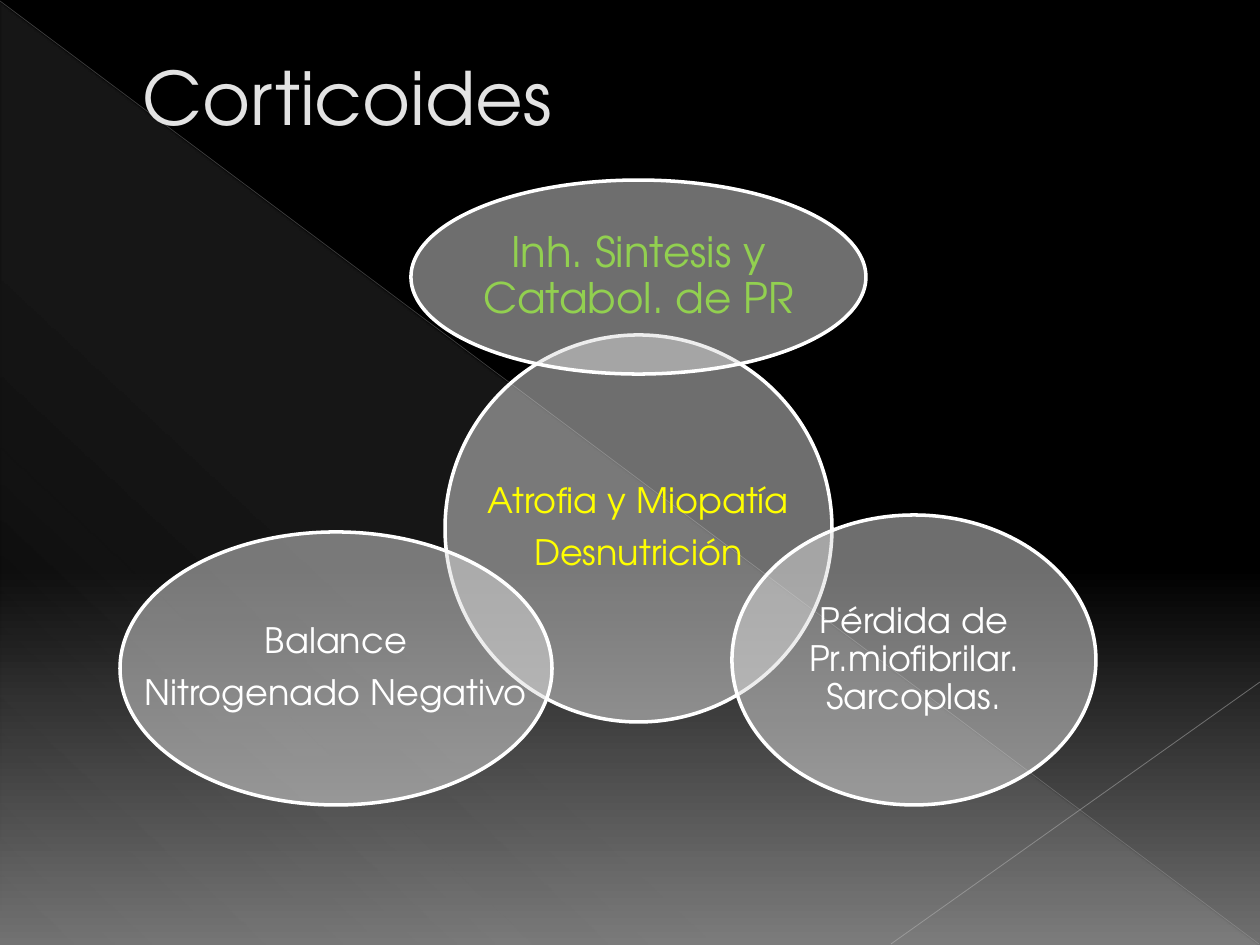
"""Build the Corticoides slide: four overlapping ellipses on a dark gradient."""
import pptx
import pptx.util
import pptx.dml.color
import pptx.enum.shapes
import pptx.enum.text
import pptx.oxml
import pptx.oxml.ns

FONT = "TeX Gyre Adventor"
COLORS = {
    "black": "000000", "gray": "707070", "veil": "F8F8F8",
    "edge": "B4B4B4", "ray": "BDBDBD", "title": "E3E3E3",
    "disc": "DDDDDD", "white": "FFFFFF", "yellow": "FFFF00", "green": "92D050",
}
BACK = [(0, "black", 100), (60, "black", 100), (100, "gray", 100)]
VEIL = [(0, "veil", 10), (70, "veil", 8), (100, "veil", 1)]
RAYS = [
    ((0, 1, 1259, 944), "edge", 0.39, 35),
    ((1260, 682, 891, 944), "ray", 0.47, 45),
]
TITLE = "Corticoides"
DISCS = [
    ((445, 335, 387, 387), ["Atrofia y Miopatía", "Desnutrición"], 20, "yellow", False),
    ((411, 180, 455, 194), ["Inh. Sintesis y Catabol. de PR"], 24, "green", True),
    ((732, 515, 364, 290), ["Pérdida de Pr.miofibrilar. Sarcoplas."], 20, "white", True),
    ((120, 532, 432, 273), ["Balance", "Nitrogenado Negativo"], 20, "white", False),
]
SHAPE = pptx.enum.shapes.MSO_SHAPE
ALIGN = pptx.enum.text.PP_ALIGN
Pt = pptx.util.Pt
NS = pptx.oxml.ns.nsdecls("a")
qn = pptx.oxml.ns.qn


def px(*vals):
    return [pptx.util.Emu(round(v * 914400 / 126)) for v in vals]


def rgb(name):
    return pptx.dml.color.RGBColor.from_string(COLORS[name])


def fade(props, part):
    color = next(props.iter(qn("a:solidFill")))[0]
    color.append(pptx.oxml.parse_xml(f'<a:alpha {NS} val="{part * 1000}"/>'))


def blend(props, stops, angle):
    marks = "".join(
        f'<a:gs pos="{pos * 1000}"><a:srgbClr val="{COLORS[name]}">'
        f'<a:alpha val="{part * 1000}"/></a:srgbClr></a:gs>'
        for pos, name, part in stops)
    grad = pptx.oxml.parse_xml(
        f'<a:gradFill {NS} rotWithShape="1"><a:gsLst>{marks}</a:gsLst>'
        f'<a:lin ang="{angle * 60000}" scaled="0"/></a:gradFill>')
    props.replace(props.find(qn("a:solidFill")), grad)


def write(para, text, size, color):
    run = para.add_run()
    run.text = text
    run.font.name = FONT
    run.font.size = Pt(size)
    run.font.color.rgb = rgb(color)


def add_back(slide):
    slide.background.fill.solid()
    slide.background.fill.fore_color.rgb = rgb("black")
    blend(next(slide.element.iter(qn("p:bgPr"))), BACK, 90)
    veil = slide.shapes.add_shape(SHAPE.RIGHT_TRIANGLE, *px(1, 3, 1257, 942))
    veil.shadow.inherit = False
    veil.line.fill.background()
    veil.fill.solid()
    veil.fill.fore_color.rgb = rgb("veil")
    blend(veil.element.spPr, VEIL, 133)
    for ends, color, width, part in RAYS:
        ray = slide.shapes.add_connector(
            pptx.enum.shapes.MSO_CONNECTOR.STRAIGHT, *px(*ends))
        ray.line.color.rgb = rgb(color)
        ray.line.width = Pt(width)
        props = ray.element.spPr
        fade(props, part)
        props.append(pptx.oxml.parse_xml(f"<a:effectLst {NS}/>"))


def add_title(slide):
    frame = slide.shapes.add_textbox(*px(63, 37, 1134, 118)).text_frame
    frame.word_wrap = True
    frame.vertical_anchor = pptx.enum.text.MSO_ANCHOR.MIDDLE
    frame.margin_left = px(80)[0]
    write(frame.paragraphs[0], TITLE, 42, "title")


def add_disc(slide, place, lines, size, color, wrap):
    disc = slide.shapes.add_shape(SHAPE.OVAL, *px(*place))
    disc.shadow.inherit = False
    disc.fill.solid()
    disc.fill.fore_color.rgb = rgb("disc")
    fade(disc.element.spPr, 50)
    disc.line.color.rgb = rgb("white")
    disc.line.width = Pt(2)
    frame = disc.text_frame
    frame.word_wrap = wrap
    frame.vertical_anchor = pptx.enum.text.MSO_ANCHOR.MIDDLE
    frame.margin_left = frame.margin_right = px(4)[0]
    frame.margin_top = frame.margin_bottom = px(4)[0]
    for i, line in enumerate(lines):
        para = frame.add_paragraph() if i else frame.paragraphs[0]
        para.alignment = ALIGN.CENTER
        para.line_spacing = 0.9
        para.space_after = Pt(8)
        write(para, line, size, color)


def main():
    deck = pptx.Presentation()
    deck.slide_width, deck.slide_height = px(1260, 945)
    slide = deck.slides.add_slide(deck.slide_layouts[6])
    add_back(slide)
    add_title(slide)
    for disc in DISCS:
        add_disc(slide, *disc)
    deck.save("out.pptx")


if __name__ == "__main__":
    main()
